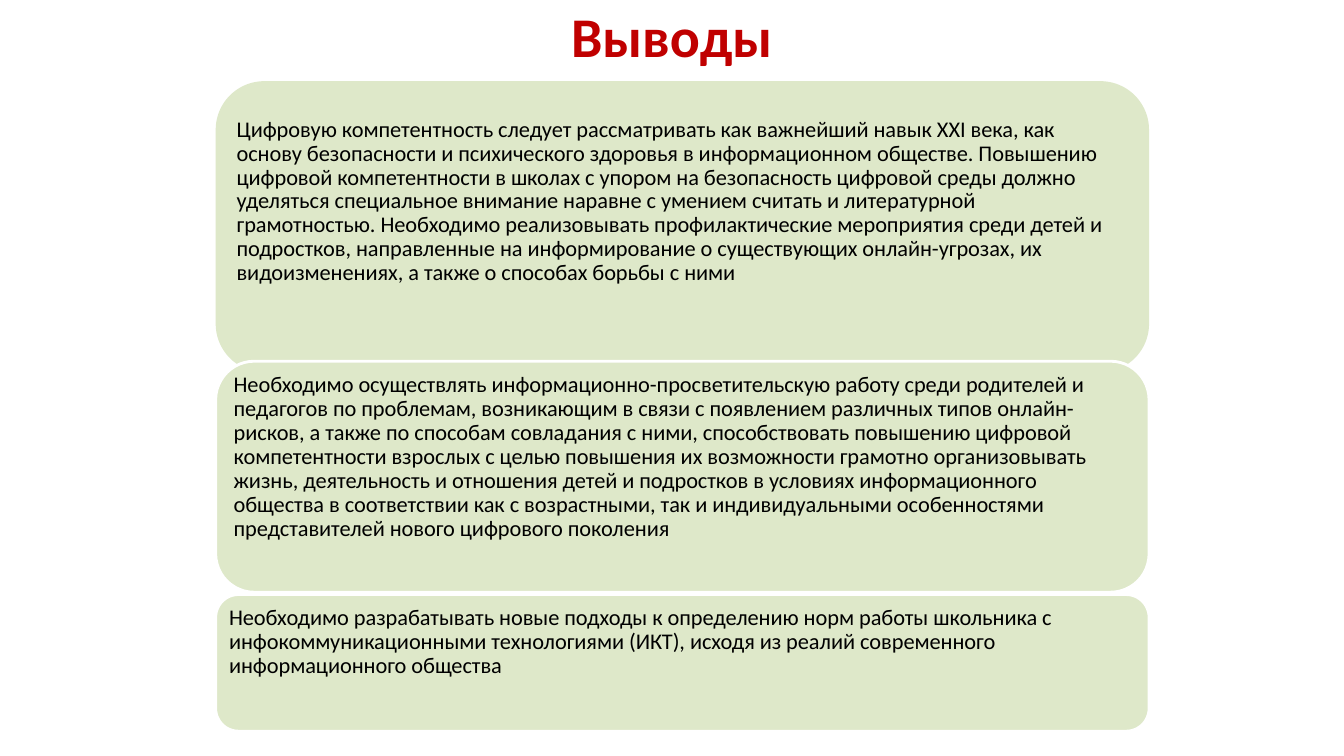
from pptx import Presentation
from pptx.dml.color import RGBColor
from pptx.enum.shapes import MSO_SHAPE
from pptx.enum.text import MSO_ANCHOR, MSO_AUTO_SIZE, PP_ALIGN
from pptx.util import Pt

ROUNDED = MSO_SHAPE.ROUNDED_RECTANGLE
TOP = MSO_ANCHOR.TOP
LEFT = PP_ALIGN.LEFT
NO_AUTOFIT = MSO_AUTO_SIZE.NONE
TITLE_ONLY = 5

FONT = "Calibri"
RED, BLACK, WHITE, GREEN = "C00000", "000000", "FFFFFF", "DEE8C9"

TITLE_BOX = (408, 0, 146, 49.7)
CARDS_LEFT, CARDS_WIDTH = 154.1, 666.7

# top, height, text insets (left, top, right), outlined, text
CONCLUSIONS = [
    (58, 208, (4.8, 16, 16), False,
     "Цифровую компетентность следует рассматривать как важнейший навык ХХI века, "
     "как основу безопасности и психического здоровья в информационном обществе. "
     "Повышению цифровой компетентности в школах с упором на безопасность цифровой "
     "среды должно уделяться специальное внимание наравне с умением считать и "
     "литературной грамотностью. Необходимо реализовывать профилактические "
     "мероприятия среди детей и подростков, направленные на информирование о "
     "существующих онлайн-угрозах, их видоизменениях, а также о способах борьбы с ними"),
    (258, 165, (4.8, 0.6, 26.5), True,
     "Необходимо осуществлять информационно-просветительскую работу среди родителей и "
     "педагогов по проблемам, возникающим в связи с появлением различных типов "
     "онлайн-рисков, а также по способам совладания с ними, способствовать повышению "
     "цифровой компетентности взрослых с целью повышения их возможности грамотно "
     "организовывать жизнь, деятельность и отношения детей и подростков в условиях "
     "информационного общества в соответствии как с возрастными, так и индивидуальными "
     "особенностями представителей нового цифрового поколения"),
    (424.7, 97.6, (4.8, 3.7, 26.5), True,
     "Необходимо разрабатывать новые подходы к определению норм работы школьника с "
     "инфокоммуникационными технологиями (ИКТ), исходя из реалий современного "
     "информационного общества"),
]


def color(hex_code):
    return RGBColor.from_string(hex_code)


def write(shape, text, size, hex_code, bold=False, insets=(0, 0, 0),
          line_spacing=None, space_before=0, wrap=True):
    """Fill a shape with one left-aligned paragraph; insets are left, top, right."""
    frame = shape.text_frame
    frame.auto_size = NO_AUTOFIT
    frame.word_wrap = wrap
    frame.vertical_anchor = TOP
    frame.margin_left, frame.margin_top, frame.margin_right = map(Pt, insets)
    frame.margin_bottom = 0
    para = frame.paragraphs[0]
    para.alignment = LEFT
    para.space_before = Pt(space_before)
    if line_spacing:
        para.line_spacing = Pt(line_spacing)
    span = para.add_run()
    span.text = text
    span.font.name = FONT
    span.font.size = Pt(size)
    span.font.bold = bold
    span.font.color.rgb = color(hex_code)
    span._r.get_or_add_rPr().set("spc", "-2")


def add_title(page, box, text):
    title = page.shapes.title
    title.left, title.top, title.width, title.height = map(Pt, box)
    write(title, text, 40, RED, bold=True, insets=(0, 1, 0), space_before=1, wrap=False)


def add_card(page, box, text, insets, outlined):
    card = page.shapes.add_shape(ROUNDED, *map(Pt, box))
    card.shadow.inherit = False
    card.fill.solid()
    card.fill.fore_color.rgb = color(GREEN)
    if outlined:
        card.line.color.rgb = color(WHITE)
        card.line.width = Pt(2)
    else:
        card.line.fill.background()
    write(card, text, 16, BLACK, insets=insets, line_spacing=17.1)


def add_conclusions_slide(deck):
    page = deck.slides.add_slide(deck.slide_layouts[TITLE_ONLY])
    add_title(page, TITLE_BOX, "Выводы")
    for top, height, insets, outlined, text in CONCLUSIONS:
        add_card(page, (CARDS_LEFT, top, CARDS_WIDTH, height), text, insets, outlined)


def main():
    deck = Presentation()
    deck.slide_width, deck.slide_height = Pt(960), Pt(540)
    add_conclusions_slide(deck)
    deck.save("out.pptx")


if __name__ == "__main__":
    main()
